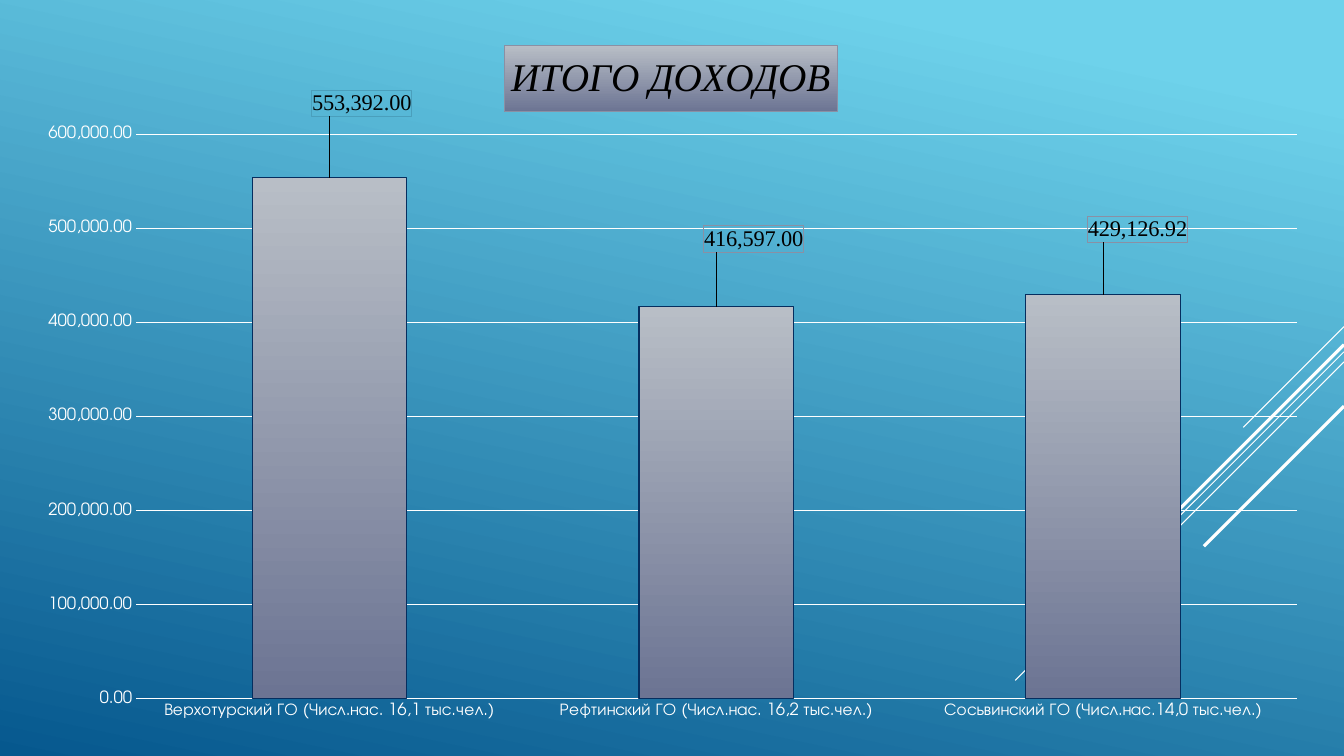
from pptx import Presentation
from pptx.chart.data import CategoryChartData
from pptx.dml.color import RGBColor
from pptx.enum.chart import XL_CHART_TYPE, XL_LABEL_POSITION, XL_TICK_MARK
from pptx.enum.shapes import MSO_CONNECTOR
from pptx.oxml import parse_xml
from pptx.oxml.ns import nsdecls, qn
from pptx.oxml.xmlchemy import OxmlElement
from pptx.util import Inches, Pt

TITLE = "ИТОГО ДОХОДОВ"
NUMBER_FORMAT = "#,##0.00"
CHART_LEFT, CHART_TOP, CHART_WIDTH, CHART_HEIGHT = 0.22, 0.26, 12.89, 7


def paint(target, *colors, start=0, angle=90):
    """Fill with one colour, or with a gradient at a clockwise angle."""
    if len(colors) == 1:
        target.solid()
        target.fore_color.rgb = RGBColor.from_string(colors[0])
        return
    target.gradient()
    target.gradient_angle = 360 - angle
    for stop, color, position in zip(target.gradient_stops, colors, (start, 1)):
        stop.color.rgb = RGBColor.from_string(color)
        stop.position = position


def place(parent, index, **lengths):
    """Give a chart part a manual layout, with lengths in inches."""
    for old_layout in parent.findall(qn("c:layout")):
        parent.remove(old_layout)
    settings = dict(lengths)
    values = "".join(
        f'<c:{name} val="{length / (CHART_WIDTH if name in "xw" else CHART_HEIGHT):.4f}"/>'
        for name, length in settings.items() if name in "xywh")
    modes = "".join(f'<c:{name} val="{settings[name]}"/>'
                    for name in ("layoutTarget", "xMode", "yMode") if name in settings)
    parent.insert(index, parse_xml(
        f'<c:layout {nsdecls("c")}><c:manualLayout>{modes}{values}</c:manualLayout></c:layout>'))


presentation = Presentation()
presentation.slide_width = Inches(13.33)
presentation.slide_height = Inches(7.5)
slide = presentation.slides.add_slide(presentation.slide_layouts[6])
paint(slide.background.fill, "6ED2EB", "06588E", start=0.1, angle=102)

# Diagonal lines: height at the right edge, run to the left, line width
for top, run, width in [(3.24, 1, 0.75), (3.49, 3.26, 0.75), (3.59, 2.07, 0.75),
                        (3.42, 1.91, 2.25), (4.03, 1.39, 2.25)]:
    diagonal = slide.shapes.add_connector(
        MSO_CONNECTOR.STRAIGHT, Inches(13.33), Inches(top),
        Inches(13.33 - run), Inches(top + run))
    paint(diagonal.line.fill, "FFFFFF")
    diagonal.line.width = Pt(width)
    diagonal._element.spPr.append(OxmlElement("a:effectLst"))

# Chart
chart_data = CategoryChartData(number_format=NUMBER_FORMAT)
chart_data.categories = ["Верхотурский ГО (Числ.нас. 16,1 тыс.чел.)",
                         "Рефтинский ГО (Числ.нас. 16,2 тыс.чел.)",
                         "Сосьвинский ГО (Числ.нас.14,0 тыс.чел.)"]
chart_data.add_series(TITLE, [553392, 416597, 429126.92])
chart = slide.shapes.add_chart(
    XL_CHART_TYPE.COLUMN_CLUSTERED, Inches(CHART_LEFT), Inches(CHART_TOP),
    Inches(CHART_WIDTH), Inches(CHART_HEIGHT), chart_data).chart
chart.has_legend = False
chart.font.size = Pt(10)
chart.font.name = "TeX Gyre Adventor"
paint(chart.font.fill, "FFFFFF")
place(chart._chartSpace.chart.plotArea, 0, layoutTarget="inner", xMode="edge", yMode="edge",
      x=1.35 - CHART_LEFT, y=1.33 - CHART_TOP, w=11.51, h=5.6)

# Chart title
title = chart.chart_title
title.text_frame.text = TITLE
title_font = title.text_frame.paragraphs[0].font
title_font.size = Pt(28)
title_font.name = "Times New Roman"
title_font.italic = True
title_font.bold = False
paint(title_font.fill, "000000")
paint(title.format.fill, "B8BEC6", "6C7493")
paint(title.format.line.fill, "8A90A4")
title.format.line.width = Pt(0.75)
place(title._element, 1, xMode="edge", yMode="edge", x=5 - CHART_LEFT, y=0.45 - CHART_TOP)

# Axes
for axis in (chart.category_axis, chart.value_axis):
    axis.major_tick_mark = XL_TICK_MARK.NONE
    axis.minor_tick_mark = XL_TICK_MARK.NONE
    axis.format.line.fill.background()
    axis.tick_labels.font.size = Pt(12)
    axis.tick_labels.font.name = "TeX Gyre Adventor"
    paint(axis.tick_labels.font.fill, "FFFFFF")
value_axis = chart.value_axis
value_axis.minimum_scale = 0
value_axis.maximum_scale = 600000
value_axis.major_unit = 100000
value_axis.tick_labels.number_format = NUMBER_FORMAT
value_axis.tick_labels.number_format_is_linked = False
paint(value_axis.major_gridlines.format.line.fill, "FFFFFF")
value_axis.major_gridlines.format.line.width = Pt(0.75)

# Columns
plot = chart.plots[0]
plot.gap_width = 150
plot.vary_by_categories = False
series = plot.series[0]
paint(series.format.fill, "B8BEC6", "6C7493")
paint(series.format.line.fill, "052E5F")
series.format.line.width = Pt(0.75)

# Value labels, shifted up and to the right of their columns
labels = series.data_labels
labels.show_value = True
labels.number_format = NUMBER_FORMAT
labels.number_format_is_linked = False
point_labels = [series.points[index].data_label for index in range(3)]
for label in [labels, *point_labels]:
    label.position = XL_LABEL_POSITION.OUTSIDE_END
    label.font.size = Pt(16)
    label.font.name = "Times New Roman"
    paint(label.font.fill, "000000")
label_rules = [(0.32, -0.57, "4A9FBC"), (0.37, -0.5, "8A90A4"), (0.34, -0.48, "8A90A4")]
for element, (right, down, border) in zip(series._element.iter(qn("c:dLbl")), label_rules):
    for old_properties in element.findall(qn("c:spPr")):
        element.remove(old_properties)
    place(element, 1, x=right, y=down)
    element.insert(2, parse_xml(
        f'<c:numFmt {nsdecls("c")} formatCode="{NUMBER_FORMAT}" sourceLinked="0"/>'))
    element.insert(3, parse_xml(
        f'<c:spPr {nsdecls("c", "a")}><a:noFill/><a:ln w="9525"><a:solidFill>'
        f'<a:srgbClr val="{border}"/></a:solidFill></a:ln></c:spPr>'))

presentation.save("out.pptx")
